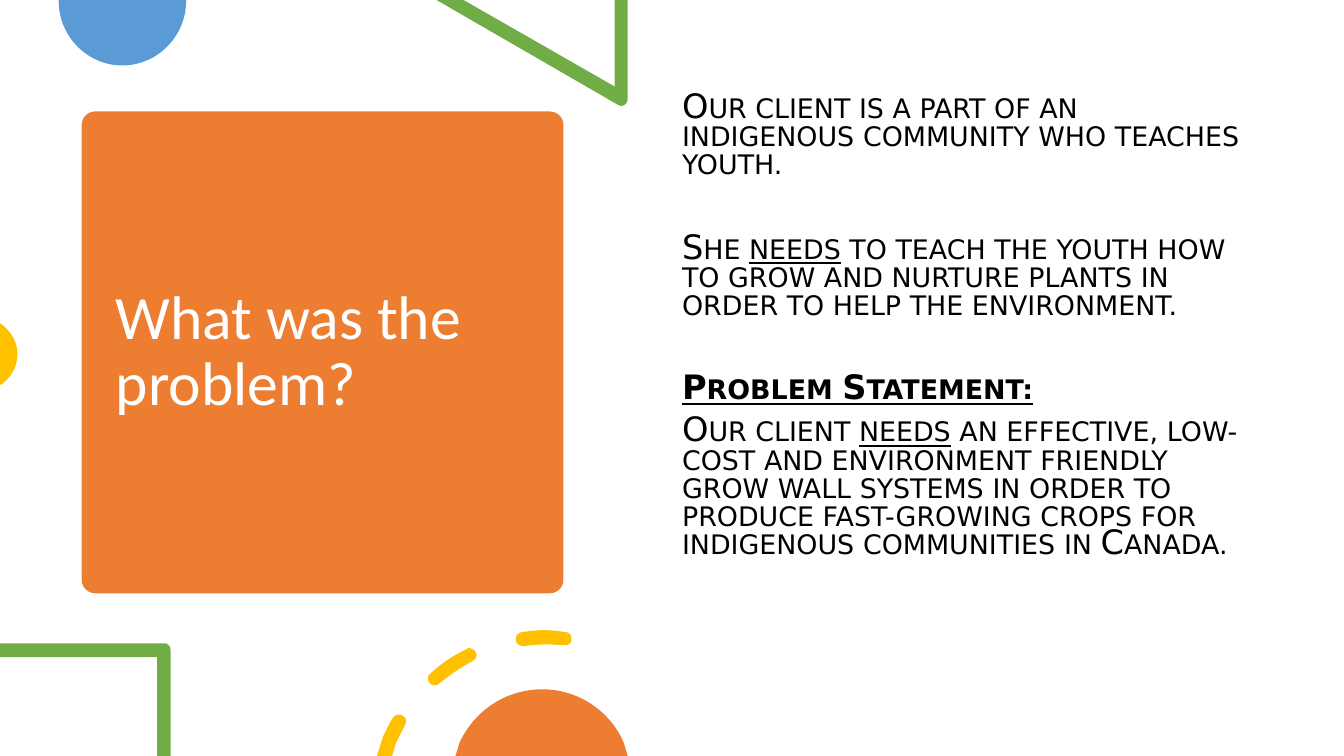
from pptx import Presentation
from pptx.dml.color import RGBColor
from pptx.enum.shapes import MSO_SHAPE
from pptx.enum.text import MSO_ANCHOR
from pptx.oxml.ns import qn
from pptx.oxml.xmlchemy import OxmlElement
from pptx.util import Cm, Pt

ROUND = MSO_SHAPE.ROUNDED_RECTANGLE
TOP, MIDDLE = MSO_ANCHOR.TOP, MSO_ANCHOR.MIDDLE

COLORS = {"orange": "ED7D31", "blue": "5B9BD5", "green": "70AD47",
          "gold": "FFC000", "white": "FFFFFF", "black": "000000"}

# Text: (space before in points, [(words, style)]), u = underline, b = bold
TITLE = [(0, [("What was the problem?", "")])]
BODY = [
    (0, [("Our client is a part of an indigenous community who teaches youth.", "")]),
    (40, [("She ", ""), ("needs", "u"),
          (" to teach the youth how to grow and nurture plants in order to "
           "help the environment.", "")]),
    (40, [("Problem Statement:", "bu")]),
    (10, [("Our client ", ""), ("needs", "u"),
          (" an effective, low-cost and environment friendly grow wall systems "
           "in order to produce fast-growing crops for indigenous communities "
           "in Canada.", "")]),
]

# Outlines in cm: a pair is a corner, six numbers are a Bezier curve
CIRCLE = [(4.69, 0), (1.48, 0), (1.48, 0.03),
          (1.48, 0.91, 2.2, 1.65, 3.08, 1.65),
          (3.97, 1.65, 4.69, 0.91, 4.69, 0.03)]
WEDGE = [(15.82, 0), (15.49, 0), (15.49, 2.18), (11.68, 0), (11, 0),
         (15.57, 2.64), (15.6, 2.67, 15.62, 2.67, 15.65, 2.67),
         (15.75, 2.67, 15.82, 2.59, 15.82, 2.49)]
DOT = [(0, 8.15), (0, 9.7), (0.05, 9.68),
       (0.28, 9.5, 0.44, 9.25, 0.44, 8.92),
       (0.44, 8.61, 0.28, 8.36, 0.05, 8.18)]
CORNER = [(4.14, 16.21), (0, 16.21), (0, 16.56), (3.96, 16.56),
          (3.96, 19.05), (4.3, 19.05), (4.3, 16.38),
          (4.3, 16.28, 4.22, 16.21, 4.14, 16.21)]
LOW_DASH = [(10.08, 18.01), (10.01, 17.98, 9.96, 18.03, 9.91, 18.08),
            (9.8, 18.24, 9.73, 18.42, 9.65, 18.57),
            (9.5, 19.05), (9.88, 19.05), (9.98, 18.72),
            (10.06, 18.57, 10.13, 18.42, 10.21, 18.26),
            (10.26, 18.19, 10.24, 18.06, 10.13, 18.03),
            (10.13, 18.01, 10.11, 18.01, 10.08, 18.01)]
MID_DASH = [(11.81, 16.33), (11.81, 16.33, 11.79, 16.33, 11.76, 16.36),
            (11.43, 16.51, 11.13, 16.71, 10.85, 16.97),
            (10.77, 17.02, 10.77, 17.15, 10.82, 17.2),
            (10.85, 17.25, 10.9, 17.27, 10.95, 17.27), (10.95, 17.27),
            (11, 17.27, 11.05, 17.25, 11.07, 17.22),
            (11.33, 17.02, 11.61, 16.81, 11.91, 16.66),
            (12.01, 16.61, 12.04, 16.51, 11.99, 16.43),
            (11.96, 16.36, 11.89, 16.33, 11.81, 16.33)]
TOP_DASH = [(13.72, 15.88), (13.51, 15.88, 13.34, 15.9, 13.16, 15.93),
            (13.06, 15.93, 12.98, 16.03, 13, 16.13),
            (13, 16.21, 13.08, 16.28, 13.18, 16.28),
            (13.18, 16.28, 13.18, 16.28, 13.21, 16.28),
            (13.54, 16.23, 13.87, 16.23, 14.22, 16.26),
            (14.3, 16.28, 14.4, 16.21, 14.4, 16.13),
            (14.43, 16.03, 14.35, 15.93, 14.27, 15.93),
            (14.27, 15.93, 14.25, 15.93, 14.25, 15.93),
            (14.07, 15.9, 13.89, 15.88, 13.72, 15.88)]
DOME = [(13.67, 17.37), (12.73, 17.37, 11.94, 17.93, 11.58, 18.72),
        (11.48, 19.05), (15.82, 19.05), (15.72, 18.72),
        (15.39, 17.93, 14.58, 17.37, 13.67, 17.37)]
BEFORE = [("blue", [CIRCLE]), ("green", [WEDGE]), ("gold", [DOT])]
AFTER = [("green", [CORNER]), ("gold", [LOW_DASH, MID_DASH, TOP_DASH]),
         ("orange", [DOME])]


def paint(shape, color):
    shape.shadow.inherit = False
    shape.fill.solid()
    shape.fill.fore_color.rgb = RGBColor.from_string(COLORS[color])
    shape.line.fill.background()


def bend(shape, parts):
    """Give the straight segments their curve handles."""
    lines = list(shape._element.iter(qn("a:lnTo")))
    for line, part in zip(lines, parts):
        if len(part) == 2:
            continue
        line.tag = qn("a:cubicBezTo")
        for i in (0, 1):
            x, y = part[2 * i:2 * i + 2]
            node = OxmlElement("a:pt")
            node.set("x", str(Cm(x) - shape.left))
            node.set("y", str(Cm(y) - shape.top))
            line.insert(i, node)


def draw(shapes, color, outlines):
    pen, parts = None, []
    for outline in outlines:
        start, *rest = [(Cm(p[-2]), Cm(p[-1])) for p in outline]
        if pen is None:
            pen = shapes.build_freeform(*start, scale=1.0)
        else:
            pen.move_to(*start)
        pen.add_line_segments(rest, close=True)
        parts += outline[1:]
    shape = pen.convert_to_shape()
    bend(shape, parts)
    paint(shape, color)


def write(shapes, box, paras, font, size, color, lead, anchor, caps=False):
    frame = shapes.add_textbox(*map(Cm, box)).text_frame
    frame.word_wrap = True
    frame.vertical_anchor = anchor
    for i, (gap, runs) in enumerate(paras):
        para = frame.add_paragraph() if i else frame.paragraphs[0]
        para.line_spacing = lead
        if gap:
            para.space_before = Pt(gap)
        for words, style in runs:
            run = para.add_run()
            run.text = words
            run.font.name, run.font.size = font, Pt(size)
            run.font.color.rgb = RGBColor.from_string(COLORS[color])
            run.font.bold = "b" in style
            run.font.underline = "u" in style
            if caps:
                run._r.get_or_add_rPr().set("cap", "small")


def main():
    deck = Presentation()
    deck.slide_width, deck.slide_height = Cm(33.87), Cm(19.05)
    shapes = deck.slides.add_slide(deck.slide_layouts[6]).shapes

    # Title card
    card = shapes.add_shape(ROUND, Cm(2.06), Cm(2.81), Cm(12.14), Cm(12.14))
    card.adjustments[0] = 0.028
    paint(card, "orange")
    write(shapes, (2.67, 3.1, 10.95, 11.58), TITLE, "Calibri", 44, "white",
          0.9, MIDDLE)

    # Upper decorations
    for color, outlines in BEFORE:
        draw(shapes, color, outlines)

    # Problem text
    write(shapes, (16.94, 2.29, 14.61, 13.59), BODY, "DejaVu Sans", 24,
          "black", 0.7, TOP, caps=True)

    # Lower decorations
    for color, outlines in AFTER:
        draw(shapes, color, outlines)

    deck.save("out.pptx")


if __name__ == "__main__":
    main()
